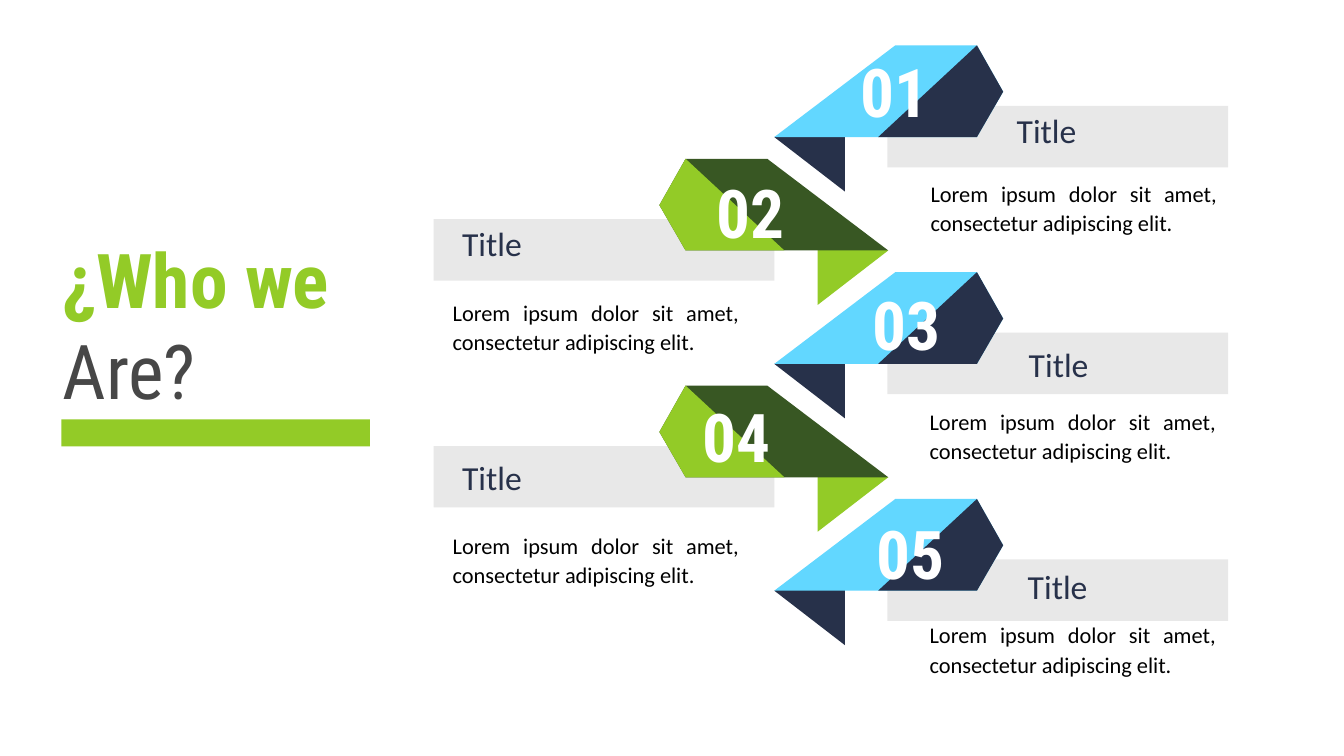
from pptx import Presentation
from pptx.dml.color import RGBColor
from pptx.enum.shapes import MSO_SHAPE
from pptx.enum.text import MSO_ANCHOR, PP_ALIGN
from pptx.util import Inches, Pt

RECTANGLE = MSO_SHAPE.RECTANGLE
TOP = MSO_ANCHOR.TOP
LEFT, CENTER, JUSTIFY = PP_ALIGN.LEFT, PP_ALIGN.CENTER, PP_ALIGN.JUSTIFY

GREEN = RGBColor(0x93, 0xCB, 0x27)
DARK_GREEN = RGBColor(0x38, 0x57, 0x23)
BLUE = RGBColor(0x62, 0xD7, 0xFF)
NAVY = RGBColor(0x27, 0x31, 0x4A)
LIGHT_GRAY = RGBColor(0xE8, 0xE8, 0xE8)
DARK_GRAY = RGBColor(0x47, 0x47, 0x47)
BLACK = RGBColor(0, 0, 0)
WHITE = RGBColor(0xFF, 0xFF, 0xFF)

HEADING_FONT, BODY_FONT = "Roboto Condensed", "Calibri"
BODY_TEXT = "Lorem ipsum dolor sit amet, consectetur adipiscing elit."

FIRST_TOP, ROW_PITCH = 0.45, 1.125
BAR_DROP, BAR_WIDTH, BAR_HEIGHT = 0.6, 3.38, 0.61

# Ribbon outlines: distance from the pointed tip, distance below the row top
FLAP = [(0.7, 0.66), (0.7, 1.45), (0, 0.91)]
BAND = [(1.2, 0), (2.01, 0), (2.27, 0.46), (2.01, 0.91), (0, 0.91)]
END = [(2.01, 0), (2.27, 0.46), (2.01, 0.91), (1.03, 0.91)]

# Side settings: tip x, direction, bar left, colours of flap, band and end
RIGHT_SIDE = (7.68, 1, 8.8, (NAVY, BLUE, NAVY))
LEFT_SIDE = (8.81, -1, 4.3, (GREEN, DARK_GREEN, GREEN))

# Left and top of the number, the title and the body text of each step
STEPS = [
    ((8.25, 0.45), (9.98, 1.04), (9.11, 1.7)),
    ((6.82, 1.65), (4.48, 2.16), (4.37, 2.88)),
    ((8.37, 2.76), (10.1, 3.36), (9.1, 3.96)),
    ((6.68, 3.87), (4.48, 4.48), (4.37, 5.19)),
    ((8.41, 5.03), (10.09, 5.57), (9.1, 6.08)),
]


def paint(shape, color):
    """Give the shape a flat fill without outline or shadow."""
    shape.fill.solid()
    shape.fill.fore_color.rgb = color
    shape.line.fill.background()
    shape.shadow.inherit = False


def format_paragraph(paragraph, font_name, size, color, alignment, bold=False):
    paragraph.alignment = alignment
    font = paragraph.runs[0].font
    font.name, font.size, font.bold = font_name, Pt(size), bold
    font.color.rgb = color


presentation = Presentation()
presentation.slide_width = Inches(13.33)
presentation.slide_height = Inches(7.5)
slide = presentation.slides.add_slide(presentation.slide_layouts[5])
shapes = slide.shapes

# Heading
heading = shapes.title
heading.left, heading.top = Inches(0.52), Inches(2.26)
heading.width, heading.height = Inches(3.01), Inches(1.92)
heading.text_frame.text = "¿Who we\nAre?"
heading.text_frame.vertical_anchor = TOP
for paragraph, color, bold in zip(
    heading.text_frame.paragraphs, (GREEN, DARK_GRAY), (True, False)
):
    format_paragraph(paragraph, HEADING_FONT, 54, color, LEFT, bold)
    paragraph.line_spacing = 1.0

underline = shapes.add_shape(
    RECTANGLE, Inches(0.61), Inches(4.16), Inches(3.06), Inches(0.27)
)
paint(underline, GREEN)

# Bars and folded ribbons, alternating between the two sides
for row in range(len(STEPS)):
    top = FIRST_TOP + row * ROW_PITCH
    tip, direction, bar_left, colors = (RIGHT_SIDE, LEFT_SIDE)[row % 2]
    bar = shapes.add_shape(
        RECTANGLE, Inches(bar_left), Inches(top + BAR_DROP),
        Inches(BAR_WIDTH), Inches(BAR_HEIGHT),
    )
    paint(bar, LIGHT_GRAY)
    for outline, color in zip((FLAP, BAND, END), colors):
        points = [
            (Inches(tip + direction * x), Inches(top + y)) for x, y in outline
        ]
        builder = shapes.build_freeform(*points[0])
        builder.add_line_segments(points[1:], close=True)
        paint(builder.convert_to_shape(), color)

# Texts
for number, (number_at, title_at, body_at) in enumerate(STEPS, start=1):
    labels = [
        (title_at, (0.8, 0.5), "Title", (BODY_FONT, 24, NAVY, CENTER)),
        (body_at, (3.08, 0.99), BODY_TEXT, (BODY_FONT, 16, BLACK, JUSTIFY)),
        (number_at, (1.25, 0.91), f"{number:02}",
         (HEADING_FONT, 48, WHITE, CENTER, True)),
    ]
    for position, size, text, style in labels:
        box = shapes.add_textbox(*(Inches(length) for length in position + size))
        frame = box.text_frame
        frame.text = text
        frame.word_wrap = text != "Title"
        format_paragraph(frame.paragraphs[0], *style)
        if text == BODY_TEXT:
            frame.margin_left = frame.margin_right = Inches(0.12)
            frame.margin_top = frame.margin_bottom = Inches(0.06)
            frame.paragraphs[0].line_spacing = 1.1

presentation.save("out.pptx")
